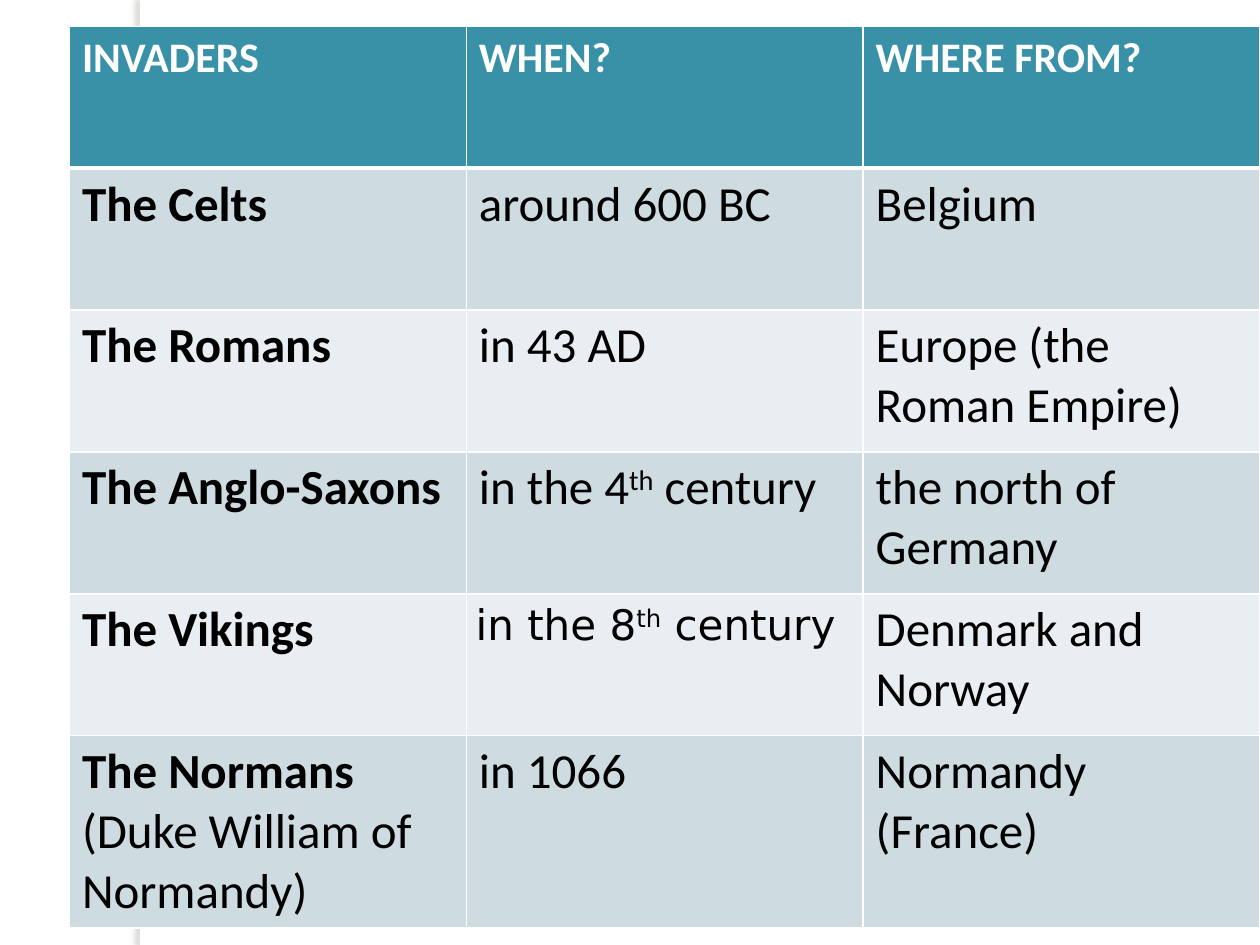
from lxml.etree import SubElement
from pptx import Presentation
from pptx.dml.color import RGBColor
from pptx.enum.shapes import MSO_SHAPE
from pptx.oxml import parse_xml
from pptx.oxml.ns import nsdecls, qn
from pptx.util import Cm, Pt

# Content: a cell is a list of (text, style) runs
HEADERS = ["INVADERS", "WHEN?", "WHERE FROM?"]
INVASIONS = [
    ([("The Celts", "bold")], [("around 600 BC", "")], [("Belgium", "")]),
    ([("The Romans", "bold")], [("in 43 AD", "")],
     [("Europe (the Roman Empire)", "")]),
    ([("The Anglo-Saxons", "bold")],
     [("in the 4", ""), ("th", "super"), (" century", "")],
     [("the north of Germany", "")]),
    ([("The Vikings", "bold")],
     [("in the 8", ""), ("th", "super"), (" century", "")],
     [("Denmark and Norway", "")]),
    ([("The Normans ", "bold"), ("(Duke William of Normandy)", "")],
     [("in 1066", "")], [("Normandy (France)", "")]),
]
VIKING_DATE = (4, 1)  # row and column of the cell set in the second font

THEME = {
    "font": "Calibri", "date_font": "DejaVu Sans",
    "header_size": 24, "body_size": 28, "date_size": 24,
    "header_fill": "3891A7", "bands": ["CEDCE1", "E8EEF1"],
    "white": "FFFFFF", "black": "000000", "shadow": "736F63",
    "rule": 1, "header_rule": 3,
}
COLUMN_WIDTH, ROW_HEIGHT = Cm(8), Cm(2.86)


def add_side_strip(slide, height):
    strip = slide.shapes.add_shape(MSO_SHAPE.RECTANGLE, Cm(2.82), 0, Cm(0.2), height)
    strip.fill.solid()
    strip.fill.fore_color.rgb = RGBColor.from_string(THEME["white"])
    strip.line.fill.background()
    strip.shadow.inherit = False
    effects = strip._element.spPr.find(qn("a:effectLst"))
    effects.append(parse_xml(
        f'<a:outerShdw {nsdecls("a")} blurRad="{Pt(3)}" dist="{Pt(3)}" dir="10800000" '
        f'algn="tl" rotWithShape="0"><a:srgbClr val="{THEME["shadow"]}">'
        '<a:alpha val="25000"/></a:srgbClr></a:outerShdw>'))


def set_borders(cell, widths):
    properties = cell._tc.get_or_add_tcPr()
    for position, (side, width) in enumerate(widths.items()):
        border = parse_xml(f'<a:ln{side} {nsdecls("a")} w="{Pt(width)}"/>')
        fill = SubElement(border, qn("a:solidFill"))
        SubElement(fill, qn("a:srgbClr"), val=THEME["white"])
        properties.insert(position, border)


def write_cell(cell, runs, font, size, color):
    paragraph = cell.text_frame.paragraphs[0]
    for text, style in runs:
        run = paragraph.add_run()
        run.text = text
        run.font.name = font
        run.font.size = Pt(size)
        run.font.bold = style == "bold"
        run.font.color.rgb = RGBColor.from_string(color)
        if style == "super":
            run._r.get_or_add_rPr().set("baseline", "30000")


def add_invaders_table(slide):
    rows = [[[(header, "bold")] for header in HEADERS], *INVASIONS]
    frame = slide.shapes.add_table(
        len(rows), len(HEADERS), Cm(1.4), Cm(0.53),
        COLUMN_WIDTH * len(HEADERS), ROW_HEIGHT * len(rows))
    table = frame.table

    for r, row in enumerate(rows):
        header = r == 0
        for c, runs in enumerate(row):
            cell = table.cell(r, c)
            font = THEME["font"]
            size = THEME["header_size" if header else "body_size"]
            if (r, c) == VIKING_DATE:
                font, size = THEME["date_font"], THEME["date_size"]
                cell.margin_left = cell.margin_right = Cm(0.19)
                cell.margin_top = cell.margin_bottom = 0
                cell.text_frame.paragraphs[0].line_spacing = 1.15
            write_cell(cell, runs, font, size, THEME["white" if header else "black"])
            cell.fill.solid()
            cell.fill.fore_color.rgb = RGBColor.from_string(
                THEME["header_fill"] if header else THEME["bands"][(r - 1) % 2])
            set_borders(cell, {
                "L": THEME["rule"], "R": THEME["rule"],
                "T": THEME["header_rule" if r == 1 else "rule"],
                "B": THEME["header_rule" if header else "rule"]})
    frame.height = Cm(18.14)


def main():
    presentation = Presentation()
    presentation.slide_width, presentation.slide_height = Cm(25.4), Cm(19.05)
    slide = presentation.slides.add_slide(presentation.slide_layouts[6])
    add_side_strip(slide, presentation.slide_height)
    add_invaders_table(slide)
    presentation.save("out.pptx")


if __name__ == "__main__":
    main()
